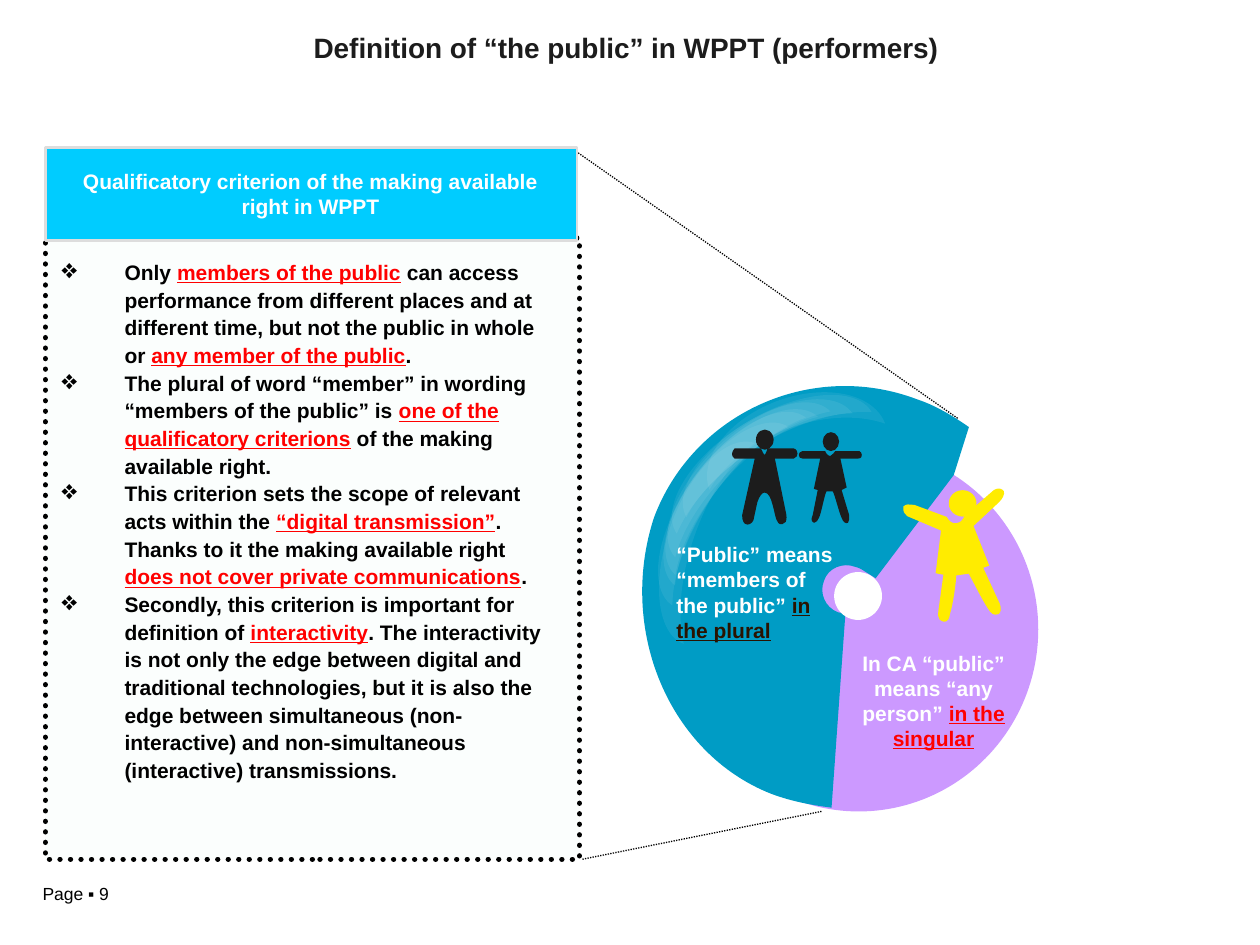
from dataclasses import dataclass
from typing import Optional

from lxml import etree
from pptx import Presentation
from pptx.dml.color import RGBColor
from pptx.enum.dml import MSO_LINE
from pptx.enum.shapes import MSO_CONNECTOR, MSO_SHAPE
from pptx.enum.text import PP_ALIGN
from pptx.oxml.ns import qn
from pptx.util import Inches, Pt

RECTANGLE, ROUNDED = MSO_SHAPE.RECTANGLE, MSO_SHAPE.ROUNDED_RECTANGLE
OVAL, MOON = MSO_SHAPE.OVAL, MSO_SHAPE.MOON
STRAIGHT, DOTTED = MSO_CONNECTOR.STRAIGHT, MSO_LINE.ROUND_DOT
LEFT, CENTER = PP_ALIGN.LEFT, PP_ALIGN.CENTER

BLACK = RGBColor(0x00, 0x00, 0x00)
WHITE = RGBColor(0xFF, 0xFF, 0xFF)
CHARCOAL = RGBColor(0x1C, 0x1C, 0x1C)
BROWN = RGBColor(0x2A, 0x13, 0x00)
RED = RGBColor(0xFF, 0x00, 0x00)
CYAN = RGBColor(0x00, 0xCC, 0xFF)
TEAL = RGBColor(0x00, 0x9C, 0xC5)
PURPLE = RGBColor(0xCC, 0x99, 0xFF)
MINT = RGBColor(0xEF, 0xFB, 0xF7)
SILVER = RGBColor(0xDD, 0xDD, 0xDD)
YELLOW = RGBColor(0xFF, 0xEC, 0x00)


@dataclass
class Look:
    fill: RGBColor
    opacity: int = 100
    line: Optional[RGBColor] = None
    width: float = 0
    dotted: bool = False


@dataclass
class Label:
    box: tuple
    paragraphs: list  # each a list of runs; every second run is emphasised
    color: RGBColor
    emphasis: RGBColor = RED
    size: int = 12
    bold: bool = True
    align: PP_ALIGN = LEFT
    bullet: str = ""


@dataclass
class Person:
    body: list
    head: tuple
    color: RGBColor = CHARCOAL
    rotation: float = 0


def apply_look(shape, look: Look) -> None:
    shape.shadow.inherit = False
    shape.fill.solid()
    shape.fill.fore_color.rgb = look.fill
    if look.opacity < 100:
        color = shape.element.spPr.find(qn("a:solidFill"))[0]
        etree.SubElement(color, qn("a:alpha"), val=str(look.opacity * 1000))
    if look.line is None:
        shape.line.fill.background()
        return
    shape.line.color.rgb = look.line
    shape.line.width = Pt(look.width)
    if look.dotted:
        shape.line.dash_style = DOTTED
        shape.element.spPr.find(qn("a:ln")).set("cap", "rnd")


def add_preset(slide, kind: MSO_SHAPE, box: tuple, look: Look):
    shape = slide.shapes.add_shape(kind, *map(Inches, box))
    apply_look(shape, look)
    return shape


def add_outline(slide, segments: list, look: Look):
    """Draw a freeform; segments of six numbers become cubic curves."""
    ends = [tuple(map(Inches, segment[-2:])) for segment in segments]
    builder = slide.shapes.build_freeform(*ends[0])
    builder.add_line_segments(ends[1:], close=True)
    shape = builder.convert_to_shape()
    steps = list(shape.element.iter(qn("a:lnTo")))
    for step, segment in zip(steps, segments[1:]):
        if len(segment) == 6:
            curve = etree.Element(qn("a:cubicBezTo"))
            for x, y in zip(segment[::2], segment[1::2]):
                etree.SubElement(curve, qn("a:pt"), x=str(Inches(x) - shape.left),
                                 y=str(Inches(y) - shape.top))
            step.getparent().replace(step, curve)
    apply_look(shape, look)
    return shape


def add_person(slide, person: Person) -> None:
    look = Look(person.color)
    add_preset(slide, OVAL, person.head, look)
    add_outline(slide, person.body, look).rotation = person.rotation


def add_dotted_line(slide, start: tuple, end: tuple) -> None:
    connector = slide.shapes.add_connector(STRAIGHT, *map(Inches, start + end))
    connector.line.color.rgb = BLACK
    connector.line.width = Pt(0.75)
    connector.line.dash_style = DOTTED
    etree.SubElement(connector.element.spPr, qn("a:effectLst"))


def add_bullet(paragraph, character: str) -> None:
    properties = paragraph._p.get_or_add_pPr()
    properties.set("marL", str(Inches(0.5)))
    properties.set("indent", str(-Inches(0.5)))
    color = etree.SubElement(properties, qn("a:buClr"))
    etree.SubElement(color, qn("a:srgbClr"), val=str(BLACK))
    etree.SubElement(properties, qn("a:buSzPct"), val="130000")
    etree.SubElement(properties, qn("a:buChar"), char=character)


def add_label(slide, label: Label) -> None:
    frame = slide.shapes.add_textbox(*map(Inches, label.box)).text_frame
    frame.word_wrap = True
    for index, runs in enumerate(label.paragraphs):
        paragraph = frame.add_paragraph() if index else frame.paragraphs[0]
        if label.bullet:
            add_bullet(paragraph, label.bullet)
            paragraph.line_spacing = 1.1
        paragraph.alignment = label.align
        for position, text in enumerate(runs):
            emphasised = position % 2 == 1
            run = paragraph.add_run()
            run.text = text
            font_format = {"name": "Arial", "size": Pt(label.size),
                           "bold": label.bold, "underline": emphasised}
            for name, value in font_format.items():
                setattr(run.font, name, value)
            run.font.color.rgb = label.emphasis if emphasised else label.color


# Outlines: the first pair is the start, pairs are lines, sextuples are curves
DISC = [(6.71, 4.87), (6.69, 4.87, 6.67, 4.86, 6.65, 4.86), (6.55, 4.82, 6.5, 4.71, 6.54, 4.61),
        (6.57, 4.51, 6.69, 4.46, 6.79, 4.5), (6.8, 4.5, 6.82, 4.51, 6.84, 4.52), (6.95, 4.59),
        (7.57, 3.77), (7.69, 3.39), (7.56, 3.3, 7.43, 3.22, 7.28, 3.17),
        (6.44, 2.85, 5.5, 3.28, 5.19, 4.11), (4.9, 5, 5.31, 5.98, 6.12, 6.3),
        (6.28, 6.36, 6.44, 6.39, 6.6, 6.41)]
MAN = [(6.09, 3.56), (6.09, 3.58, 6.07, 3.61, 6.07, 3.61), (6.06, 3.61, 6.05, 3.58, 6.04, 3.56),
       (5.83, 3.56), (5.82, 3.57, 5.81, 3.59, 5.81, 3.6), (5.81, 3.61, 5.81, 3.63, 5.83, 3.64),
       (5.99, 3.64), (5.89, 4.09), (5.89, 4.14, 5.91, 4.16, 5.92, 4.16),
       (5.93, 4.17, 5.97, 4.16, 5.98, 4.13), (6.01, 3.99), (6.03, 3.93, 6.05, 3.91, 6.07, 3.91),
       (6.1, 3.91, 6.12, 3.96, 6.13, 4), (6.15, 4.07, 6.15, 4.09, 6.16, 4.12),
       (6.17, 4.14, 6.18, 4.17, 6.21, 4.16), (6.23, 4.15, 6.25, 4.15, 6.24, 4.08),
       (6.15, 3.64), (6.3, 3.64), (6.32, 3.63, 6.33, 3.62, 6.33, 3.6),
       (6.33, 3.59, 6.32, 3.56, 6.3, 3.56)]
WOMAN = [(6.55, 3.58), (6.55, 3.59, 6.57, 3.62, 6.59, 3.62), (6.61, 3.61, 6.62, 3.59, 6.63, 3.58),
         (6.82, 3.58), (6.83, 3.58, 6.84, 3.6, 6.84, 3.61), (6.84, 3.62, 6.84, 3.64, 6.81, 3.64),
         (6.67, 3.64), (6.72, 3.87), (6.68, 3.89), (6.74, 4.09),
         (6.74, 4.12, 6.74, 4.14, 6.73, 4.15), (6.71, 4.16, 6.69, 4.14, 6.68, 4.11),
         (6.66, 4.07, 6.63, 3.94, 6.61, 3.9), (6.56, 3.9), (6.54, 3.94, 6.52, 4.07, 6.5, 4.11),
         (6.49, 4.13, 6.48, 4.15, 6.46, 4.15), (6.45, 4.14, 6.43, 4.14, 6.45, 4.09),
         (6.49, 3.89), (6.46, 3.88), (6.51, 3.64), (6.37, 3.64),
         (6.35, 3.64, 6.34, 3.63, 6.34, 3.61), (6.34, 3.6, 6.35, 3.58, 6.37, 3.58)]
SINGLE = [
    (7.56, 4.09), (7.57, 4.12, 7.59, 4.15, 7.63, 4.15), (7.67, 4.15, 7.69, 4.12, 7.7, 4.1),
    (7.96, 3.93), (7.99, 3.92, 8.01, 3.92, 8.03, 3.94), (8.04, 3.95, 8.05, 3.98, 7.99, 4.03),
    (7.76, 4.19), (7.84, 4.52), (7.79, 4.53), (7.88, 4.83), (7.89, 4.87, 7.88, 4.9, 7.86, 4.91),
    (7.82, 4.92, 7.8, 4.9, 7.78, 4.85), (7.75, 4.79, 7.69, 4.61, 7.67, 4.56), (7.57, 4.56),
    (7.56, 4.62, 7.51, 4.79, 7.48, 4.85), (7.47, 4.89, 7.45, 4.92, 7.42, 4.91),
    (7.4, 4.9, 7.37, 4.89, 7.39, 4.82), (7.47, 4.54), (7.41, 4.52), (7.5, 4.19), (7.25, 4.04),
    (7.23, 4.02, 7.22, 4, 7.23, 3.96), (7.26, 3.94, 7.27, 3.95, 7.32, 3.96)]
PEOPLE = [Person(MAN, (6, 3.41, 0.14, 0.16)), Person(WOMAN, (6.53, 3.43, 0.13, 0.15)),
          Person(SINGLE, (7.53, 3.89, 0.22, 0.21), YELLOW, -8)]

# Glints on the disc: left, top, width, height, rotation
GLINTS = [(5.31, 3.4, 0.41, 1.69, 19.4), (5.42, 3.14, 0.41, 1.69, 33), (5.51, 3.01, 0.41, 1.69, 37.9),
          (5.63, 2.85, 0.41, 1.69, 46.8), (5.56, 2.95, 0.42, 1.69, 42), (5.74, 2.74, 0.42, 1.69, 55.6),
          (5.87, 2.66, 0.42, 1.69, 60.5), (6.01, 2.66, 0.47, 1.49, 69.4)]

CRITERIA = [
    ["Only ", "members of the public", " can access performance from different places and at different "
     "time, but not the public in whole or ", "any member of the public", "."],
    ["The plural of word “member” in wording “members of the public” is ",
     "one of the qualificatory criterions", " of the making available right."],
    ["This criterion sets the scope of relevant acts within the ", "“digital transmission”",
     ". Thanks to it the making available right ", "does not cover private communications", "."],
    ["Secondly, this criterion is important for definition of ", "interactivity",
     ". The interactivity is not only the edge between digital and traditional technologies, but it is "
     "also the edge between simultaneous (non-interactive) and non-simultaneous (interactive) "
     "transmissions."]]
LABELS = [
    Label((0.24, 6.96, 1.47, 0.27), [["Page ▪ 9"]], BLACK, size=10, bold=False),
    Label((6.73, 5.11, 1.36, 0.91), [["In CA “public” means “any person” ", "in the singular"]],
          WHITE, align=CENTER),
    Label((0.39, 1.99, 4.06, 4.32), CRITERIA, BLACK, bullet="❖"),
    Label((5.27, 4.25, 1.46, 0.91), [["“Public” means “members of the public” ", "in the plural"]],
          WHITE, BROWN),
    Label((0.38, 1.29, 4.17, 0.51),
          [["Qualificatory criterion of the making available right in WPPT"]], WHITE, align=CENTER),
    Label((0.18, 0.19, 9.58, 0.37), [["Definition of “the public” in WPPT (performers)"]],
          CHARCOAL, size=16, align=CENTER)]

presentation = Presentation()
presentation.slide_width, presentation.slide_height = Inches(10), Inches(7.5)
slide = presentation.slides.add_slide(presentation.slide_layouts[6])

# Criteria panel, its header and the lines to the disc
add_preset(slide, RECTANGLE, (0.36, 1.89, 4.24, 4.93), Look(MINT, 20, BLACK, 3, True))
add_dotted_line(slide, (6.52, 6.44), (4.62, 6.82))
add_dotted_line(slide, (7.6, 3.32), (4.57, 1.2))
header = add_preset(slide, ROUNDED, (0.36, 1.17, 4.22, 0.74), Look(CYAN, line=SILVER, width=1.5))
header.adjustments[0] = 0

# Disc with hole and glints
add_preset(slide, OVAL, (5.39, 3.55, 2.85, 2.89), Look(PURPLE))
add_outline(slide, DISC, Look(TEAL))
add_preset(slide, OVAL, (6.62, 4.54, 0.38, 0.38), Look(WHITE))
for *box, rotation in GLINTS:
    glint = add_preset(slide, MOON, box, Look(WHITE, 7))
    glint.adjustments[0] = 0.5
    glint.rotation = rotation

for person in PEOPLE:
    add_person(slide, person)
for label in LABELS:
    add_label(slide, label)

presentation.save("out.pptx")
